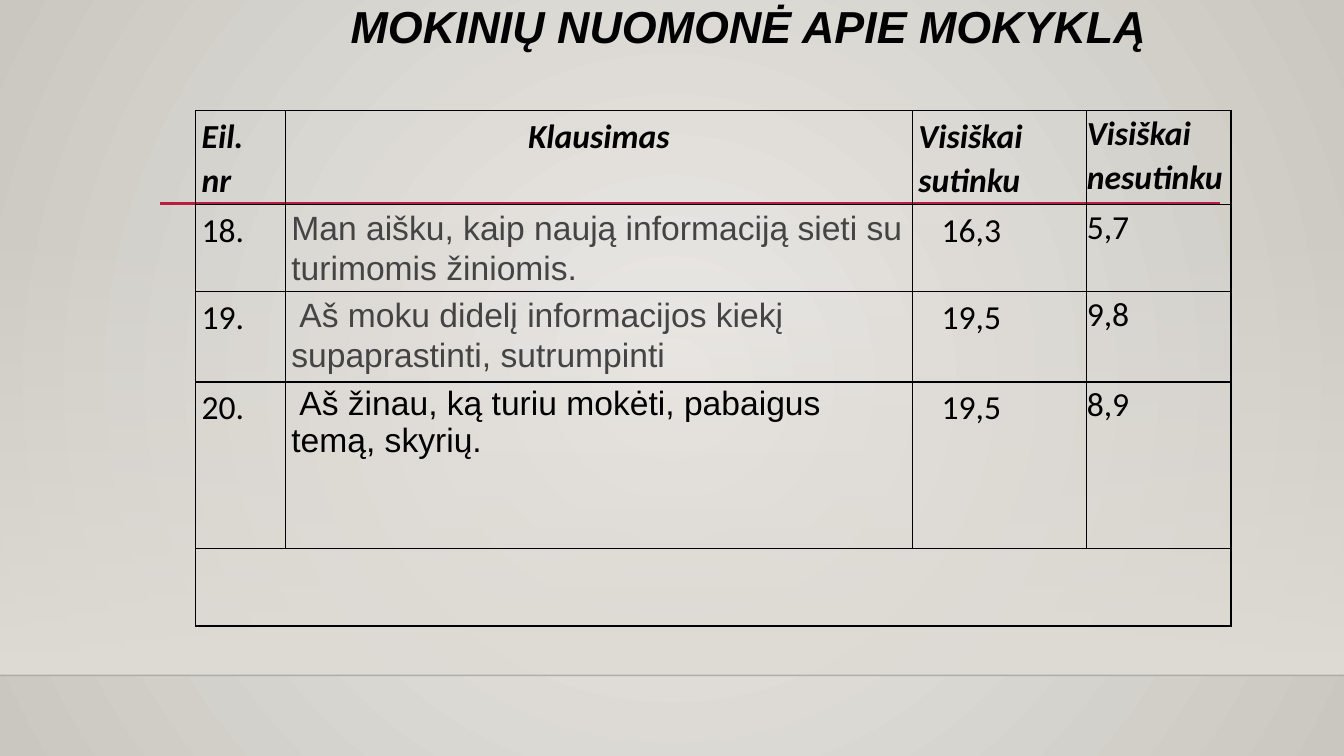
from dataclasses import dataclass

from lxml import etree
from pptx import Presentation
from pptx import util as u
from pptx.dml.color import RGBColor
from pptx.enum import shapes, text
from pptx.oxml import ns


@dataclass(frozen=True)
class Theme:
    centre: str = "ECEAE7"
    edge: str = "CAC7C1"
    floor: str = "DFDBD5"
    floor_line: str = "000001"
    accent: str = "B71E42"
    ink: str = "000000"
    grey: str = "444444"
    heading_font: str = "Arial"
    table_font: str = "Calibri"
    title_size: int = 32
    table_size: int = 24


THEME = Theme()
COLUMN_WIDTHS = (0.89, 6.22, 1.73, 1.43)
ROW_HEIGHTS = (0.93, 0.86, 0.9, 1.65, 0.77)
HEADINGS = (("Eil.", "nr"), ("Klausimas",), ("Visiškai sutinku",), ("Visiškai nesutinku",))
# Number, question, agree, disagree, question colour, first-line indent, line spacing
QUESTIONS = (
    ("18.", "Man aišku, kaip naują informaciją sieti su turimomis žiniomis.",
     "16,3", "5,7", THEME.grey, 0, 1.07),
    ("19.", "Aš moku didelį informacijos kiekį supaprastinti, sutrumpinti",
     "19,5", "9,8", THEME.grey, 0.08, 1.07),
    ("20.", "Aš žinau, ką turiu mokėti, pabaigus temą, skyrių.",
     "19,5", "8,9", THEME.ink, 0.08, 1.0),
)


def rgb(value):
    return RGBColor.from_string(value)


def add_child(parent, tag, **attributes):
    return etree.SubElement(parent, ns.qn(tag), attributes)


def set_opacity(element, percents):
    for colour, percent in zip(element.iter(ns.qn("a:srgbClr")), percents):
        add_child(colour, "a:alpha", val=str(percent * 1000))


def fill_gradient(fill, colours):
    fill.gradient()
    for stop, colour, position in zip(fill.gradient_stops, colours, (0, 1)):
        stop.color.rgb = rgb(colour)
        stop.position = position


def paint_background(slide):
    fill_gradient(slide.background.fill, (THEME.centre, THEME.edge))
    gradient = next(slide.element.iter(ns.qn("a:gradFill")))
    gradient.remove(gradient.find(ns.qn("a:lin")))
    circle = add_child(gradient, "a:path", path="circle")
    add_child(circle, "a:fillToRect", l="50000", t="50000", r="50000", b="50000")


def add_floor_fade(slide):
    shape = slide.shapes.add_shape(shapes.MSO_SHAPE.RECTANGLE, u.Inches(0), u.Inches(2.21),
                                   u.Inches(13.33), u.Inches(4.49))
    shape.shadow.inherit = False
    shape.line.fill.background()
    fill_gradient(shape.fill, (THEME.floor, THEME.floor))
    shape.fill.gradient_angle = 270
    set_opacity(shape.element.spPr, (0, 100))


def add_rule(slide, left, right, top, colour, width, opacity=100):
    line = slide.shapes.add_connector(shapes.MSO_CONNECTOR.STRAIGHT, u.Inches(left),
                                      u.Inches(top), u.Inches(right), u.Inches(top))
    line.line.color.rgb = rgb(colour)
    line.line.width = u.Pt(width)
    properties = line._element.spPr
    if opacity < 100:
        set_opacity(properties, (opacity,))
    add_child(properties, "a:effectLst")


def add_run(paragraph, words, font, size, colour, strong=False):
    run = paragraph.add_run()
    run.text = words
    run.font.name = font
    run.font.size = u.Pt(size)
    run.font.color.rgb = rgb(colour)
    run.font.bold = run.font.italic = strong


def set_title(slide, words):
    title = slide.shapes.title
    title.left, title.top = u.Inches(1.61), u.Inches(0)
    title.width, title.height = u.Inches(11.63), u.Inches(1.44)
    frame = title.text_frame
    frame.word_wrap = True
    frame.auto_size = text.MSO_AUTO_SIZE.NONE
    frame.vertical_anchor = text.MSO_ANCHOR.TOP
    paragraph = frame.paragraphs[0]
    paragraph.alignment = text.PP_ALIGN.CENTER
    paragraph.line_spacing = 0.9
    add_run(paragraph, words, THEME.heading_font, THEME.title_size, THEME.ink, True)


def format_cell(cell, inset=True):
    cell.margin_left = cell.margin_right = u.Inches(0.06 if inset else 0)
    cell.margin_top = cell.margin_bottom = u.Inches(0.03 if inset else 0)
    cell.fill.background()
    properties = cell._tc.get_or_add_tcPr()
    for position, side in enumerate(("a:lnL", "a:lnR", "a:lnT", "a:lnB")):
        border = etree.Element(ns.qn(side), {"w": str(u.Pt(1))})
        add_child(add_child(border, "a:solidFill"), "a:srgbClr", val=THEME.ink)
        properties.insert(position, border)


def write_cell(cell, lines, font=THEME.table_font, colour=THEME.ink, strong=False,
               centred=False, margin=0, indent=0, spacing=1.07):
    for index, words in enumerate(lines):
        frame = cell.text_frame
        paragraph = frame.add_paragraph() if index else frame.paragraphs[0]
        paragraph.alignment = text.PP_ALIGN.CENTER if centred else text.PP_ALIGN.LEFT
        paragraph.line_spacing = spacing
        properties = paragraph._p.get_or_add_pPr()
        properties.set("marL", str(u.Inches(margin)))
        properties.set("indent", str(u.Inches(indent)))
        add_run(paragraph, words, font, THEME.table_size, colour, strong)


def add_opinion_table(slide):
    frame = slide.shapes.add_table(len(ROW_HEIGHTS), len(COLUMN_WIDTHS), u.Inches(1.94),
                                   u.Inches(1.1), u.Inches(sum(COLUMN_WIDTHS)),
                                   u.Inches(sum(ROW_HEIGHTS)))
    table = frame.table
    table.first_row = table.horz_banding = False
    for column, width in zip(table.columns, COLUMN_WIDTHS):
        column.width = u.Inches(width)
    for row, height in zip(table.rows, ROW_HEIGHTS):
        row.height = u.Inches(height)
        for index, cell in enumerate(row.cells):
            format_cell(cell, inset=index < 3)

    # Headings
    for index, lines in enumerate(HEADINGS):
        write_cell(table.cell(0, index), lines, strong=True, centred=index == 1)

    # Questions and answers
    for row, (number, question, agree, disagree, colour, indent, spacing) in enumerate(QUESTIONS, 1):
        write_cell(table.cell(row, 0), (number,))
        write_cell(table.cell(row, 1), (question,), font=THEME.heading_font,
                   colour=colour, indent=indent, spacing=spacing)
        write_cell(table.cell(row, 2), (agree,), margin=0.23)
        write_cell(table.cell(row, 3), (disagree,))

    # Empty closing row
    last = len(ROW_HEIGHTS) - 1
    table.cell(last, 0).merge(table.cell(last, len(COLUMN_WIDTHS) - 1))


def main():
    presentation = Presentation()
    presentation.slide_width = u.Inches(13.33)
    presentation.slide_height = u.Inches(7.5)
    slide = presentation.slides.add_slide(presentation.slide_layouts[5])

    # Backdrop
    paint_background(slide)
    add_floor_fade(slide)
    add_rule(slide, 0, 13.33, 6.7, THEME.floor_line, 1, opacity=20)
    add_rule(slide, 1.59, 12.1, 2.02, THEME.accent, 2.5)

    # Content
    set_title(slide, "MOKINIŲ NUOMONĖ APIE MOKYKLĄ")
    add_opinion_table(slide)
    presentation.save("out.pptx")


if __name__ == "__main__":
    main()
